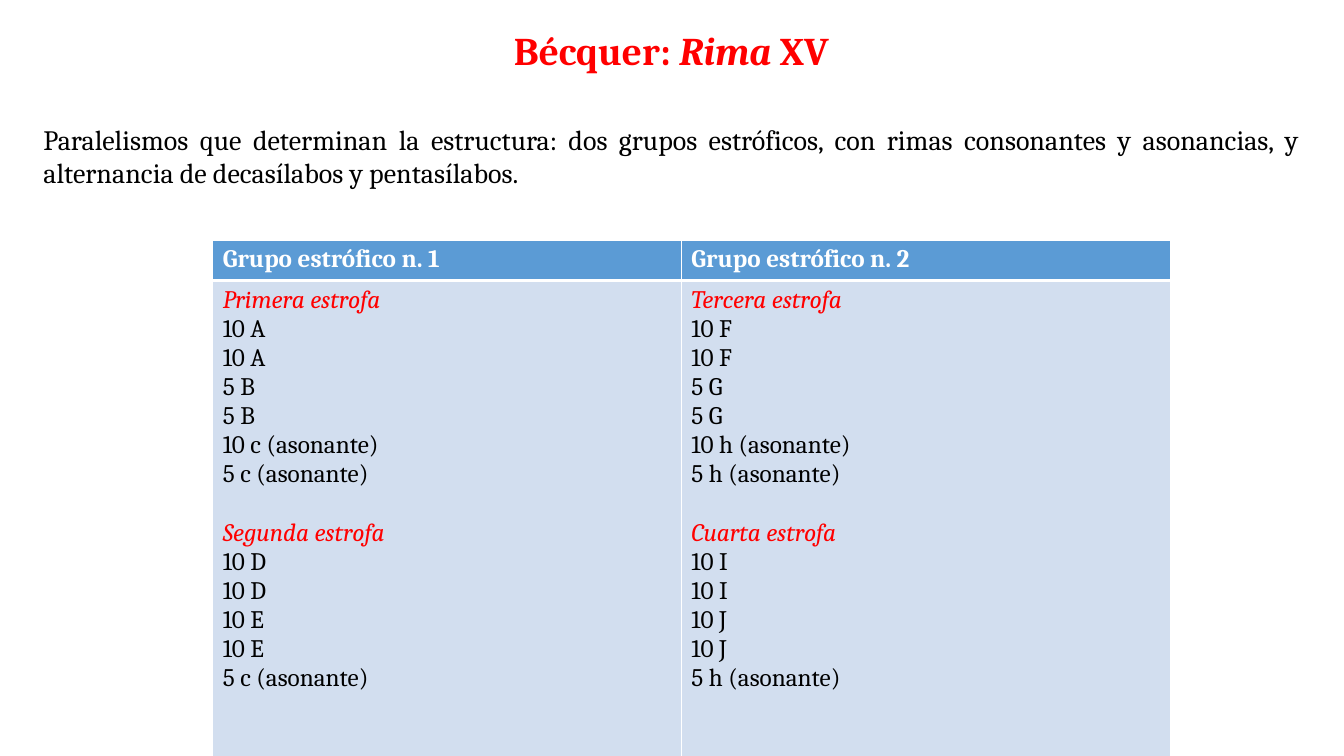
from dataclasses import dataclass

from lxml.etree import SubElement
from pptx import Presentation
from pptx.dml.color import RGBColor
from pptx.enum.text import MSO_ANCHOR, MSO_AUTO_SIZE, PP_ALIGN as Align
from pptx.oxml.ns import qn
from pptx.util import Cm, Pt


@dataclass(frozen=True)
class Theme:
    font: str = "Cambria"
    accent: str = "FF0000"
    text: str = "000000"
    light: str = "FFFFFF"
    header_fill: str = "5B9BD5"
    body_fill: str = "D2DEEF"
    title_size: int = 28
    body_size: int = 20
    table_size: int = 18
    stanza_gap: int = 21
    thin_line: int = 1
    thick_line: int = 3


class SlideBuilder:
    def __init__(self, slide, theme):
        self.slide = slide
        self.theme = theme

    def style(self, run, size, color, bold=False, italic=False):
        font = run.font
        font.name, font.size = self.theme.font, Pt(size)
        font.bold, font.italic = bold, italic
        font.color.rgb = RGBColor.from_string(color)

    def place(self, shape, left, top, width, height):
        shape.left, shape.top = Cm(left), Cm(top)
        shape.width, shape.height = Cm(width), Cm(height)
        text_frame = shape.text_frame
        text_frame.word_wrap = True
        text_frame.auto_size = MSO_AUTO_SIZE.NONE
        text_frame.vertical_anchor = MSO_ANCHOR.TOP
        return text_frame.paragraphs[0]

    def title(self, parts, *box):
        """Each part is a pair of text and italic flag."""
        paragraph = self.place(self.slide.shapes.title, *box)
        paragraph.alignment = Align.CENTER
        for text, italic in parts:
            run = paragraph.add_run()
            run.text = text
            self.style(run, self.theme.title_size, self.theme.accent, True, italic)

    def body(self, text, *box):
        paragraph = self.place(self.slide.placeholders[1], *box)
        paragraph.text = text
        paragraph.alignment = Align.JUSTIFY
        paragraph.space_before = Pt(0)
        properties = paragraph._p.get_or_add_pPr()
        properties.set("marL", "0")
        properties.set("indent", "0")
        SubElement(properties, qn("a:buNone"))
        self.style(paragraph.runs[0], self.theme.body_size, self.theme.text)

    def paint_cell(self, cell, fill, thick_side):
        properties = cell._tc.get_or_add_tcPr()
        for side in ("lnL", "lnR", "lnT", "lnB"):
            width = self.theme.thick_line if side == thick_side else self.theme.thin_line
            line = SubElement(properties, qn(f"a:{side}"), w=str(Pt(width)))
            line_fill = SubElement(line, qn("a:solidFill"))
            SubElement(line_fill, qn("a:srgbClr"), val=self.theme.light)
        cell.fill.solid()
        cell.fill.fore_color.rgb = RGBColor.from_string(fill)

    def header_cell(self, cell, text):
        self.paint_cell(cell, self.theme.header_fill, "lnB")
        cell.text_frame.text = text
        run = cell.text_frame.paragraphs[0].runs[0]
        self.style(run, self.theme.table_size, self.theme.light, bold=True)

    def stanza_cell(self, cell, stanzas):
        self.paint_cell(cell, self.theme.body_fill, "lnT")
        cell.text_frame.text = "\n".join(
            line for name, verses in stanzas.items() for line in (name, *verses))
        for index, paragraph in enumerate(cell.text_frame.paragraphs):
            is_name = paragraph.text in stanzas
            if is_name and index:
                paragraph.space_before = Pt(self.theme.stanza_gap)
            color = self.theme.accent if is_name else self.theme.text
            self.style(paragraph.runs[0], self.theme.table_size, color, italic=is_name)

    def table(self, groups, left, top, widths, heights):
        frame = self.slide.shapes.add_table(
            len(heights), len(groups), Cm(left), Cm(top),
            Cm(sum(widths)), Cm(sum(heights)))
        table = frame.table
        for row, height in zip(table.rows, heights):
            row.height = Cm(height)
        for index, (heading, stanzas) in enumerate(groups.items()):
            table.columns[index].width = Cm(widths[index])
            self.header_cell(table.cell(0, index), heading)
            self.stanza_cell(table.cell(1, index), stanzas)


TITLE = [("Bécquer: ", False), ("Rima", True), (" XV", False)]
SUMMARY = ("Paralelismos que determinan la estructura: dos grupos estróficos, "
           "con rimas consonantes y asonancias, y alternancia de decasílabos "
           "y pentasílabos.")
GROUPS = {
    "Grupo estrófico n. 1": {
        "Primera estrofa": ["10 A", "10 A", "5 B", "5 B",
                            "10 c (asonante)", "5 c (asonante)"],
        "Segunda estrofa": ["10 D", "10 D", "10 E", "10 E", "5 c (asonante)"],
    },
    "Grupo estrófico n. 2": {
        "Tercera estrofa": ["10 F", "10 F", "5 G", "5 G",
                            "10 h (asonante)", "5 h (asonante)"],
        "Cuarta estrofa": ["10 I", "10 I", "10 J", "10 J", "5 h (asonante)"],
    },
}


def main():
    presentation = Presentation()
    presentation.slide_width, presentation.slide_height = Cm(33.87), Cm(19.05)
    slide = presentation.slides.add_slide(presentation.slide_layouts[1])
    builder = SlideBuilder(slide, Theme())

    # Heading and summary
    builder.title(TITLE, 0.84, 0.53, 32.16, 1.5)
    builder.body(SUMMARY, 0.84, 2.95, 32.16, 2)

    # Rhyme scheme by stanza group
    builder.table(GROUPS, 5.36, 6.05, widths=(11.81, 12.32), heights=(1.02, 13))

    presentation.save("out.pptx")


if __name__ == "__main__":
    main()
